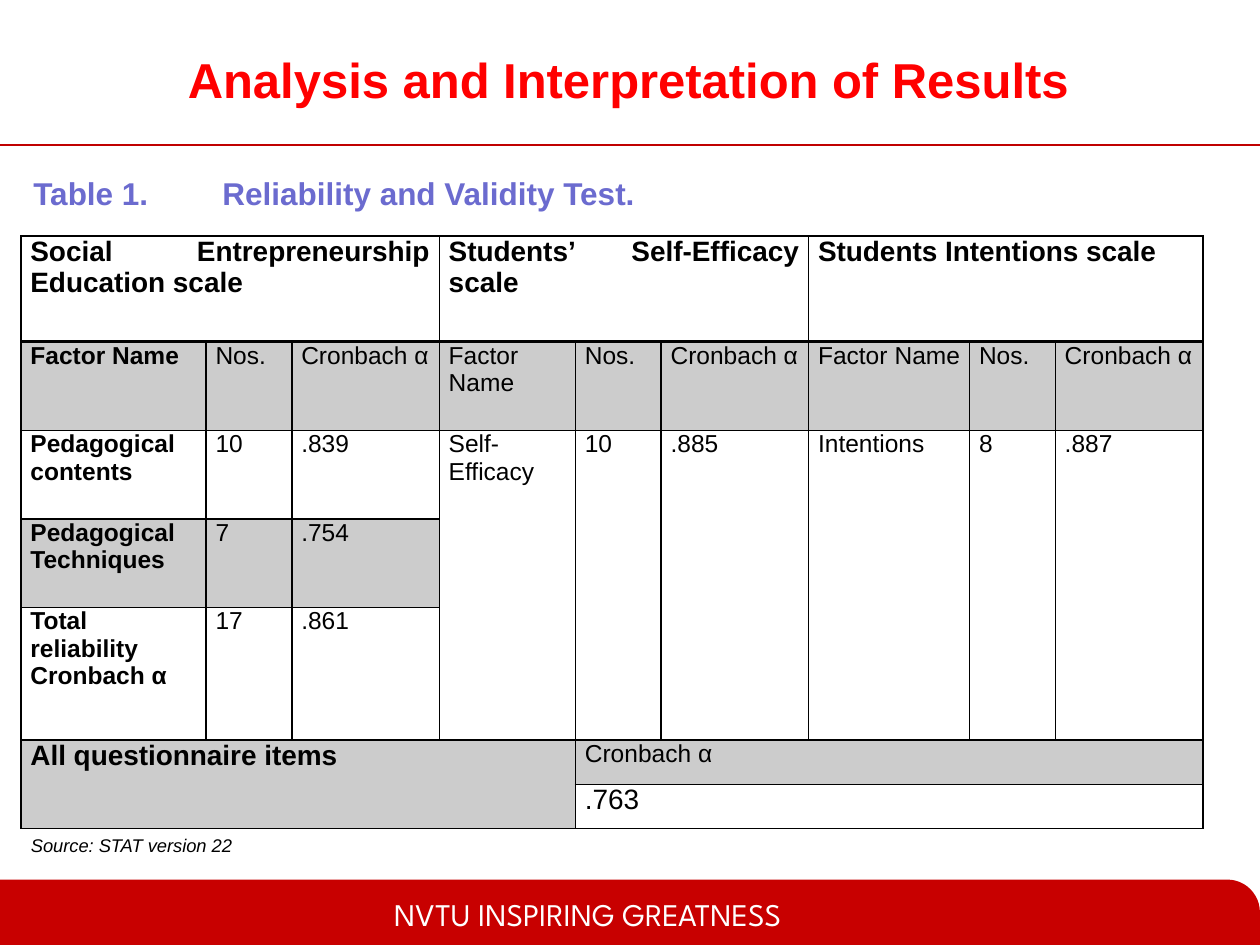
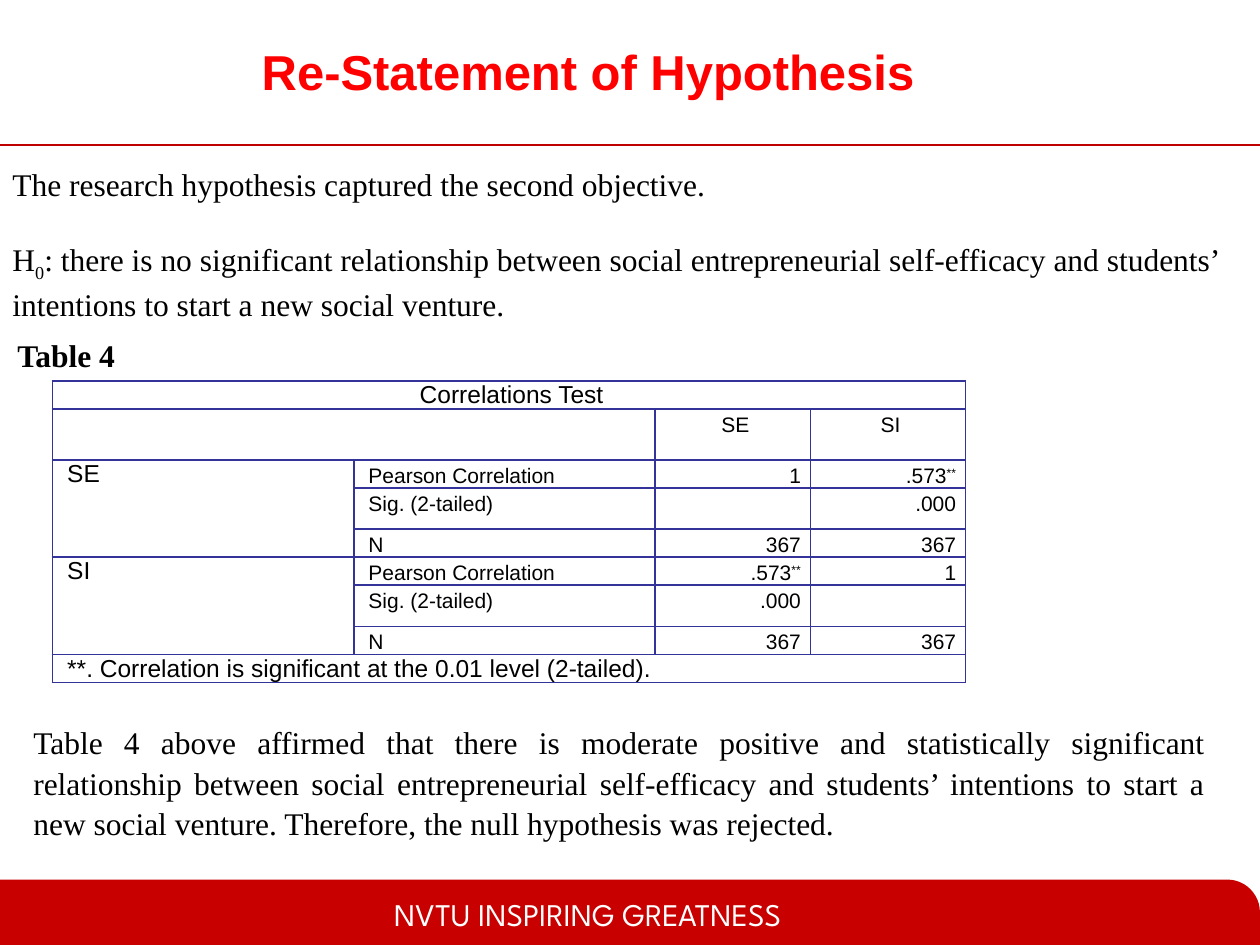
from pptx import Presentation
from pptx.dml.color import RGBColor
from pptx.enum.shapes import MSO_CONNECTOR, MSO_SHAPE
from pptx.enum.text import MSO_ANCHOR, PP_ALIGN as ALIGN
from pptx.oxml import parse_xml
from pptx.oxml.ns import nsdecls, qn
from pptx.util import Pt
from lxml import etree

# Content
FOOTER = "NVTU INSPIRING GREATNESS"

RELIABILITY = {
    "title": "Analysis and Interpretation of Results ",
    "caption": "Table 1.\t\tReliability and Validity Test.",
    "source": "Source: STAT version 22",
    "rows": [
        ["Social Entrepreneurship Education scale", "", "",
         "Students’ Self-Efficacy scale", "", "", "Students Intentions scale", "", ""],
        ["Factor Name ", "Nos.", "Cronbach α"] + ["Factor Name ", "Nos. ", "Cronbach α"] * 2,
        ["Pedagogical contents", "10", ".839", "Self-Efficacy ", "10", ".885",
         "Intentions", "8", ".887"],
        ["Pedagogical Techniques", "7", ".754"] + [""] * 6,
        ["Total reliability Cronbach α", "17", ".861"] + [""] * 6,
        ["All questionnaire items", "", "", "", "Cronbach α", "", "", "", ""],
        ["", "", "", "", ".763", "", "", "", ""],
    ],
    # (row, column, rows spanned, columns spanned)
    "spans": [(0, col, 1, 3) for col in (0, 3, 6)]
    + [(2, col, 3, 1) for col in range(3, 9)]
    + [(5, 0, 2, 4), (5, 4, 1, 5), (6, 4, 1, 5)],
    "widths": [105.8, 49, 84.3, 77.8, 49, 84.3, 92, 49, 84.3],
    "heights": [60.5, 50.6, 50.6, 50.6, 75.9, 25.3, 25.3],
}

HYPOTHESIS = {
    "title": "Re-Statement of Hypothesis",
    "intro": "The research hypothesis captured the second objective. ",
    "null": [("H", 0), ("0", -25),
             (": there is no significant relationship between social entrepreneurial "
              "self-efficacy and students’ intentions to start a new social venture.", 0)],
    "caption": "Table 4",
    "finding": "Table 4 above affirmed that there is moderate positive and statistically "
               "significant relationship between social entrepreneurial self-efficacy and "
               "students’ intentions to start a new social venture. Therefore, the null "
               "hypothesis was rejected.",
    "rows": [
        ["Correlations Test", "", "", ""],
        ["", "", "SE", "SI"],
        ["SE", "Pearson Correlation", "1", ".573**"],
        ["", "Sig. (2-tailed)", "", ".000"],
        ["", "N", "367", "367"],
        ["SI", "Pearson Correlation", ".573**", "1"],
        ["", "Sig. (2-tailed)", ".000", ""],
        ["", "N", "367", "367"],
        ["**. Correlation is significant at the 0.01 level (2-tailed).", "", "", ""],
    ],
    "spans": [(0, 0, 1, 4), (1, 0, 1, 2), (2, 0, 3, 1), (5, 0, 3, 1), (8, 0, 1, 4)],
    "widths": [172.2, 172.2, 88.7, 88.7],
    "heights": [16, 29, 16, 23.5, 16, 16, 23.5, 16, 16],
}

# Shared look
COLORS = {"title": "FF0000", "rule": "C00000", "band": "C80000", "caption": "6B6BCF",
          "ink": "000000", "white": "FFFFFF", "shade": "CCCCCC", "grid": "333399"}
SANS, SERIF, BRAND = "Arial", "Times New Roman", "League Spartan"
SLIDE_W, SLIDE_H = 720, 540
RULE_Y, BAND_Y = 82.8, 502.6
CELL_INSET = 5.4


def color(name):
    return RGBColor.from_string(COLORS[name])


def write(para, parts, size, font=SANS, ink="ink", bold=False, italic=False):
    """Fill a paragraph with text, or with (text, baseline percent) parts."""
    if isinstance(parts, str):
        parts = [(parts, 0)]
    for text, baseline in parts:
        span = para.add_run()
        span.text = text
        span.font.size, span.font.name = Pt(size), font
        span.font.bold, span.font.italic = bold, italic
        span.font.color.rgb = color(ink)
        if baseline:
            span._r.get_or_add_rPr().set("baseline", str(baseline * 1000))


def add_text(page, place, parts, size, align=ALIGN.LEFT, spacing=None, wrap=True,
             anchor=MSO_ANCHOR.TOP, **style):
    box = page.shapes.add_textbox(*map(Pt, place))
    frame = box.text_frame
    frame.word_wrap, frame.vertical_anchor = wrap, anchor
    para = frame.paragraphs[0]
    para.alignment = align
    if spacing:
        para.line_spacing = spacing
    write(para, parts, size, **style)


def add_page(deck, title, title_place):
    """Add a slide with the rule, the footer band and the title."""
    page = deck.slides.add_slide(deck.slide_layouts[5])
    rule = page.shapes.add_connector(MSO_CONNECTOR.STRAIGHT, Pt(0), Pt(RULE_Y),
                                     Pt(SLIDE_W), Pt(RULE_Y))
    rule.line.color.rgb, rule.line.width = color("rule"), Pt(0.75)
    etree.SubElement(rule._element.spPr, qn("a:effectLst"))

    band = page.shapes.add_shape(MSO_SHAPE.ROUND_1_RECTANGLE, Pt(0), Pt(BAND_Y),
                                 Pt(SLIDE_W), Pt(SLIDE_H - BAND_Y))
    band.adjustments[0] = 0.5
    band.shadow.inherit = False
    band.fill.solid()
    band.fill.fore_color.rgb = color("band")
    band.line.fill.background()
    add_text(page, (218.2, 507.6, 255, 29), FOOTER, 18, font=BRAND, ink="white")

    heading = page.shapes.title
    heading.left, heading.top, heading.width, heading.height = map(Pt, title_place)
    heading.text_frame.vertical_anchor = MSO_ANCHOR.MIDDLE
    para = heading.text_frame.paragraphs[0]
    para.alignment = ALIGN.CENTER
    write(para, title, 28, ink="title", bold=True)
    return page


def set_borders(cell, line_color, bottom):
    props = cell._tc.get_or_add_tcPr()
    for index, side in enumerate("LRTB"):
        width = Pt(bottom if side == "B" else 1)
        props.insert(index, parse_xml(
            f'<a:ln{side} {nsdecls("a")} w="{width}"><a:solidFill>'
            f'<a:srgbClr val="{COLORS[line_color]}"/></a:solidFill></a:ln{side}>'))


def add_grid(page, left, top, content, line_color, style_cell, heavy_row=None):
    """Draw a bordered table; style_cell writes each cell and names its fill."""
    rows, widths, heights = content["rows"], content["widths"], content["heights"]
    table = page.shapes.add_table(len(rows), len(widths), Pt(left), Pt(top),
                                  Pt(sum(widths)), Pt(sum(heights))).table
    table.first_row = table.horz_banding = False
    for column, width in zip(table.columns, widths):
        column.width = Pt(width)
    for line, height in zip(table.rows, heights):
        line.height = Pt(height)
    for r, texts in enumerate(rows):
        for c, text in enumerate(texts):
            cell = table.cell(r, c)
            cell.margin_left = cell.margin_right = Pt(CELL_INSET)
            cell.margin_top = cell.margin_bottom = 0
            fill = style_cell(cell.text_frame.paragraphs[0], text, r, c)
            cell.fill.solid()
            cell.fill.fore_color.rgb = color(fill)
            # Both sides of a shared edge carry the same weight
            set_borders(cell, line_color, 2 if r == heavy_row else 1)
    for r, c, down, across in content["spans"]:
        table.cell(r, c).merge(table.cell(r + down - 1, c + across - 1))


def style_reliability(para, text, r, c):
    para.alignment = ALIGN.JUSTIFY
    large = r in (0, 6) or (r == 5 and c == 0)
    if text:
        write(para, text, 16 if large else 14, bold=r == 0 or c == 0)
    shaded = r == 1 or (r == 3 and c < 3) or r == 5 or (r == 6 and c < 4)
    return "shade" if shaded else "white"


def style_correlation(para, text, r, c):
    para.line_spacing = Pt(16)
    para._p.get_or_add_pPr().set("marL", str(Pt(3)))
    if r < 2:
        para.alignment = ALIGN.CENTER
    elif c > 1:
        para.alignment = ALIGN.RIGHT
    if text:
        starred = text.endswith("**")
        parts = [(text[:-2], 0), ("**", 30)] if starred else text
        write(para, parts, 14 if c == 0 else 12)
    return "white"


def build_reliability(deck):
    content = RELIABILITY
    page = add_page(deck, content["title"], (38.9, 18, 648, 54))
    add_text(page, (12, 95.8, 696, 29), content["caption"], 18, ink="caption", bold=True)
    add_grid(page, 12, 134.8, content, "ink", style_reliability, heavy_row=0)
    add_text(page, (10.6, 473, 700, 20), content["source"], 10.5, ALIGN.JUSTIFY,
             anchor=MSO_ANCHOR.MIDDLE, italic=True)


def build_hypothesis(deck):
    content = HYPOTHESIS
    page = add_page(deck, content["title"], (12, 3.6, 648, 74))
    add_grid(page, 30, 217.8, content, "grid", style_correlation)
    body = {"size": 18, "font": SERIF, "spacing": 1.07}
    add_text(page, (0, 89.3, 570, 31), content["intro"], align=ALIGN.JUSTIFY, **body)
    add_text(page, (0, 131.8, 744, 54), content["null"], **body)
    add_text(page, (2.8, 187.2, 71.3, 29), content["caption"], align=ALIGN.JUSTIFY,
             wrap=False, bold=True, **body)
    add_text(page, (12, 408.2, 684, 77), content["finding"], align=ALIGN.JUSTIFY, **body)


def main():
    deck = Presentation()
    deck.slide_width, deck.slide_height = Pt(SLIDE_W), Pt(SLIDE_H)
    build_reliability(deck)
    build_hypothesis(deck)
    deck.save("out.pptx")


if __name__ == "__main__":
    main()
